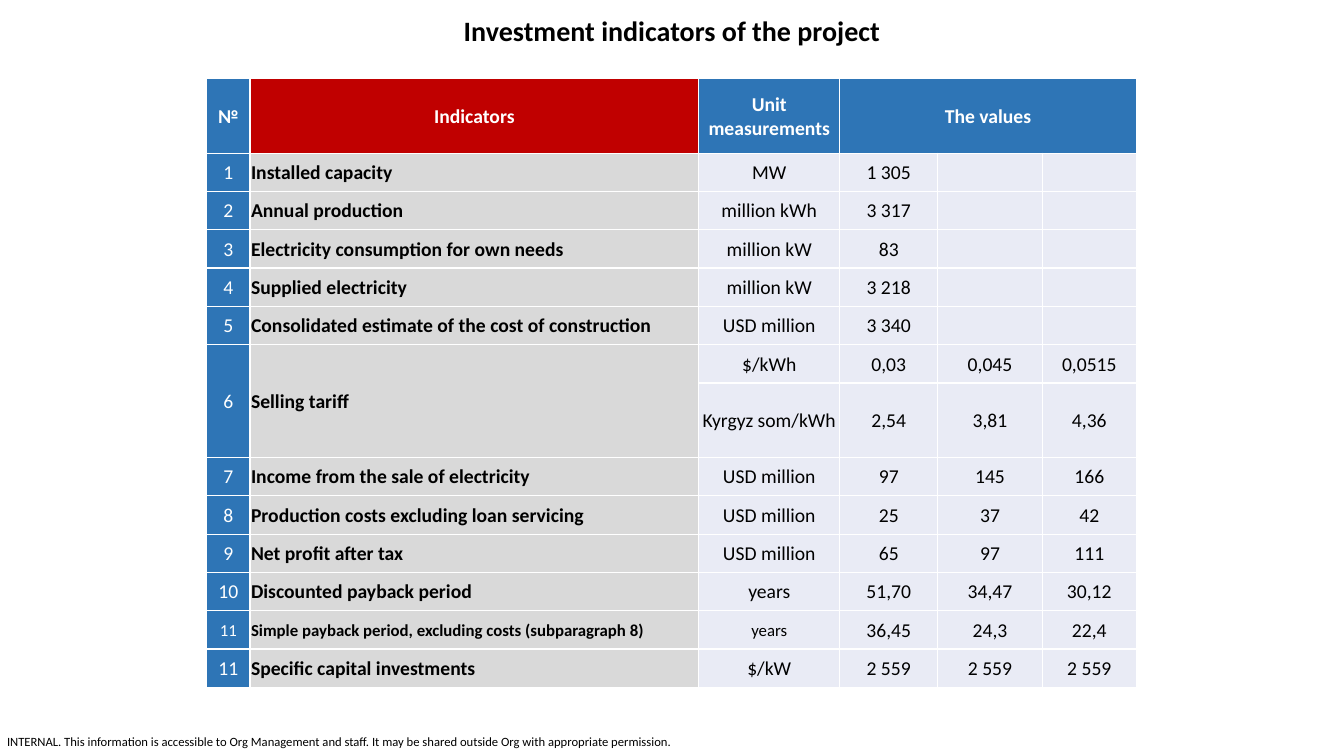
"""Build the slide with the investment indicators of the project."""
from dataclasses import dataclass

from lxml.etree import SubElement
from pptx import Presentation
from pptx.dml.color import RGBColor
from pptx.enum.shapes import MSO_SHAPE as Preset
from pptx.enum.text import MSO_ANCHOR as Anchor, PP_ALIGN as Align
from pptx.oxml.ns import qn
from pptx.slide import Slide
from pptx.table import Table, _Cell as Cell
from pptx.text.text import TextFrame
from pptx.util import Inches, Pt

BLACK = RGBColor(0x00, 0x00, 0x00)
WHITE = RGBColor(0xFF, 0xFF, 0xFF)
BLUE = RGBColor(0x2E, 0x75, 0xB6)
RED = RGBColor(0xC0, 0x00, 0x00)
GREY = RGBColor(0xD9, 0xD9, 0xD9)
PALE = RGBColor(0xE9, 0xEB, 0xF5)

FONT = "Calibri"
COLUMN_WIDTHS = (0.43, 4.45, 1.4, 0.97, 1.04, 0.93)
ROW_HEIGHT = 0.38
TALL_ROW_HEIGHT = 0.74
TALL_ROWS = (0, 7)
TARIFF_ROW = 6
HEADINGS = ("№", "Indicators", "Unit measurements", "The values")
NOTICE = (
    "INTERNAL. This information is accessible to Org Management and staff. "
    "It may be shared outside Org with appropriate permission."
)


@dataclass(frozen=True)
class Indicator:
    number: str
    name: str
    unit: str
    values: tuple[str, ...]
    label_size: int = 14

    def texts(self) -> tuple[str, ...]:
        return (self.number, self.name, self.unit, *self.values)


@dataclass(frozen=True)
class Style:
    fill: RGBColor
    color: RGBColor
    bold: bool = False
    align: Align = Align.CENTER


HEADING_STYLES = (Style(BLUE, WHITE, True), Style(RED, WHITE, True)) + (Style(BLUE, WHITE, True),) * 4
BODY_STYLES = (Style(BLUE, WHITE), Style(GREY, BLACK, True, Align.LEFT)) + (Style(PALE, BLACK),) * 4

INDICATORS = (
    Indicator("1", "Installed capacity", "MW", ("1 305",)),
    Indicator("2", "Annual production", "million kWh", ("3 317",)),
    Indicator("3", "Electricity consumption for own needs", "million kW", ("83",)),
    Indicator("4", "Supplied electricity", "million kW", ("3 218",)),
    Indicator("5", "Consolidated estimate of the cost of construction", "USD million", ("3 340",)),
    Indicator("6", "Selling tariff", "$/kWh", ("0,03", "0,045", "0,0515")),
    Indicator("", "", "Kyrgyz som/kWh", ("2,54", "3,81", "4,36")),
    Indicator("7", "Income from the sale of electricity", "USD million", ("97", "145", "166")),
    Indicator("8", "Production costs excluding loan servicing", "USD million", ("25", "37", "42")),
    Indicator("9", "Net profit after tax", "USD million", ("65", "97", "111")),
    Indicator("10", "Discounted payback period", "years", ("51,70", "34,47", "30,12")),
    Indicator("11", "Simple payback period, excluding costs (subparagraph 8)", "years",
              ("36,45", "24,3", "22,4"), 12),
    Indicator("11", "Specific capital investments", "$/kW", ("2 559", "2 559", "2 559")),
)


def write_text(frame: TextFrame, text: str, size: int, color: RGBColor, bold: bool, align: Align) -> None:
    frame.text = text
    frame.word_wrap = True
    para = frame.paragraphs[0]
    para.alignment = align
    for span in para.runs:
        span.font.name = FONT
        span.font.size = Pt(size)
        span.font.bold = bold
        span.font.color.rgb = color


def add_borders(cell: Cell) -> None:
    properties = cell._tc.get_or_add_tcPr()
    for side in ("a:lnL", "a:lnR", "a:lnT", "a:lnB"):
        line = SubElement(properties, qn(side), w=str(Pt(1)))
        fill = SubElement(line, qn("a:solidFill"))
        SubElement(fill, qn("a:srgbClr"), val=str(WHITE))


def style_cell(cell: Cell, text: str, style: Style, size: int) -> None:
    add_borders(cell)
    cell.fill.solid()
    cell.fill.fore_color.rgb = style.fill
    cell.vertical_anchor = Anchor.MIDDLE
    cell.margin_left = cell.margin_right = cell.margin_top = Inches(0.01)
    cell.margin_bottom = 0
    write_text(cell.text_frame, text, size, style.color, style.bold, style.align)


def fill_row(table: Table, row: int, texts: tuple[str, ...], styles: tuple[Style, ...], label_size: int) -> None:
    for column, style in enumerate(styles):
        text = texts[column] if column < len(texts) else ""
        style_cell(table.cell(row, column), text, style, label_size if column < 3 else 14)


def add_indicator_table(page: Slide) -> None:
    heights = [TALL_ROW_HEIGHT if row in TALL_ROWS else ROW_HEIGHT for row in range(len(INDICATORS) + 1)]
    table = page.shapes.add_table(
        len(heights), len(COLUMN_WIDTHS), Inches(2.05), Inches(0.78),
        Inches(sum(COLUMN_WIDTHS)), Inches(sum(heights)),
    ).table
    table.first_row = table.horz_banding = False
    for column, width in zip(table.columns, COLUMN_WIDTHS):
        column.width = Inches(width)
    for row, height in zip(table.rows, heights):
        row.height = Inches(height)
    fill_row(table, 0, HEADINGS, HEADING_STYLES, 14)
    for number, indicator in enumerate(INDICATORS, start=1):
        fill_row(table, number, indicator.texts(), BODY_STYLES, indicator.label_size)
    table.cell(0, 3).merge(table.cell(0, 5))
    for column in (0, 1):
        table.cell(TARIFF_ROW, column).merge(table.cell(TARIFF_ROW + 1, column))


def add_title(page: Slide) -> None:
    box = page.shapes.add_shape(
        Preset.ROUNDED_RECTANGLE, Inches(3.86), Inches(0.11), Inches(5.61), Inches(0.43)
    )
    box.shadow.inherit = False
    box.fill.background()
    box.line.fill.background()
    frame = box.text_frame
    frame.vertical_anchor = Anchor.MIDDLE
    write_text(frame, "Investment indicators of the project", 20, BLACK, True, Align.CENTER)
    frame.paragraphs[0].line_spacing = 0.9


def add_notice(page: Slide) -> None:
    box = page.shapes.add_textbox(Inches(0.07), Inches(7.28), Inches(6.7), Inches(0.15))
    frame = box.text_frame
    frame.margin_left = frame.margin_right = frame.margin_top = frame.margin_bottom = 0
    write_text(frame, NOTICE, 9, BLACK, False, Align.LEFT)


def main() -> None:
    deck = Presentation()
    deck.slide_width, deck.slide_height = Inches(13.33), Inches(7.5)
    page = deck.slides.add_slide(deck.slide_layouts[6])
    add_notice(page)
    add_title(page)
    add_indicator_table(page)
    deck.save("out.pptx")


if __name__ == "__main__":
    main()
